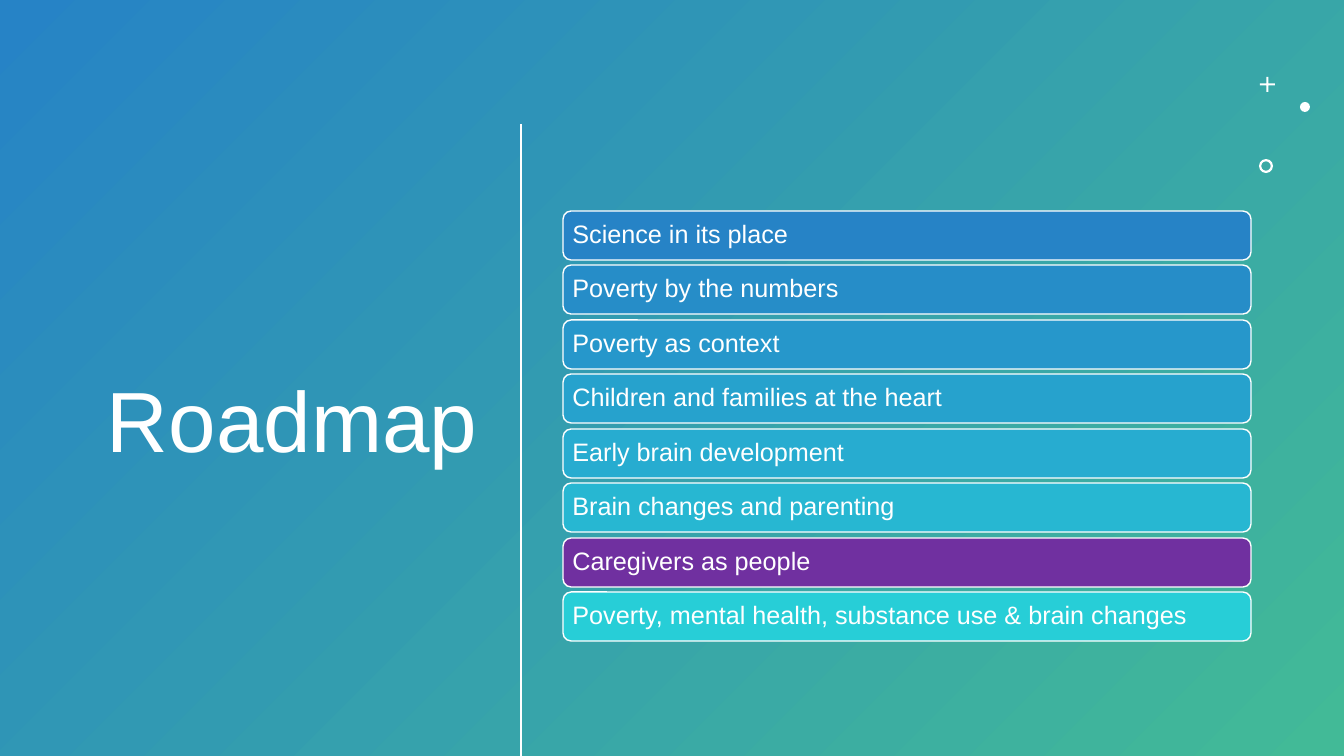
from pptx import Presentation
from pptx.dml.color import RGBColor
from pptx.enum.shapes import MSO_CONNECTOR, MSO_SHAPE
from pptx.enum.text import MSO_ANCHOR, MSO_AUTO_SIZE, PP_ALIGN
from pptx.oxml.ns import qn
from pptx.util import Inches, Pt
from lxml import etree

RECT, ROUND = MSO_SHAPE.RECTANGLE, MSO_SHAPE.ROUNDED_RECTANGLE
CROSS, OVAL, DONUT = MSO_SHAPE.CROSS, MSO_SHAPE.OVAL, MSO_SHAPE.DONUT
STRAIGHT = MSO_CONNECTOR.STRAIGHT
MIDDLE, NO_FIT = MSO_ANCHOR.MIDDLE, MSO_AUTO_SIZE.NONE
LEFT, RIGHT = PP_ALIGN.LEFT, PP_ALIGN.RIGHT

WHITE = RGBColor(0xFF, 0xFF, 0xFF)
BLUE = RGBColor(0x26, 0x83, 0xC6)
GREEN = RGBColor(0x42, 0xBA, 0x97)
PURPLE = RGBColor(0x70, 0x30, 0xA0)

STEPS = [
    ("Science in its place", BLUE),
    ("Poverty by the numbers", RGBColor(0x26, 0x8D, 0xC8)),
    ("Poverty as context", RGBColor(0x26, 0x97, 0xCB)),
    ("Children and families at the heart", RGBColor(0x26, 0xA2, 0xCD)),
    ("Early brain development", RGBColor(0x27, 0xAC, 0xD0)),
    ("Brain changes and parenting", RGBColor(0x27, 0xB7, 0xD2)),
    ("Caregivers as people", PURPLE),
    ("Poverty, mental health, substance use & brain changes",
     RGBColor(0x27, 0xCE, 0xD7)),
]
MARKS = [
    (CROSS, (1260, 77, 15, 15), 0.43),
    (OVAL, (1300, 102, 10, 10), None),
    (DONUT, (1259, 159, 14, 14), 0.16),
]


def px(n):
    return round(n * Inches(1) / 100.8)


def apply(item, values):
    for name, value in values.items():
        setattr(item, name, value)


class Deck:
    font = "Arial"
    color = WHITE

    def __init__(self):
        self.file = Presentation()
        apply(self.file, {"slide_width": px(1344), "slide_height": px(756)})
        self.slide = self.file.slides.add_slide(self.file.slide_layouts[5])
        self.shapes = self.slide.shapes

    def label(self, shape, text, size, align, inset):
        frame = shape.text_frame
        frame.text = text
        apply(frame, {"word_wrap": True, "auto_size": NO_FIT,
                      "vertical_anchor": MIDDLE})
        sides = ("left", "right", "top", "bottom")
        apply(frame, {f"margin_{side}": px(inset) for side in sides})
        line = frame.paragraphs[0]
        apply(line, {"alignment": align, "line_spacing": 0.9})
        apply(line.font, {"name": self.font, "size": Pt(size)})
        line.font.color.rgb = self.color

    def title(self, text, box):
        shape = self.shapes.title
        apply(shape, dict(zip(("left", "top", "width", "height"), map(px, box))))
        self.label(shape, text, 61, RIGHT, 9)

    def shape(self, kind, box, fill=None, adjust=None):
        shape = self.shapes.add_shape(kind, *map(px, box))
        shape.shadow.inherit = False
        shape.line.fill.background()
        if fill is not None:
            shape.fill.solid()
            shape.fill.fore_color.rgb = fill
        if adjust is not None:
            shape.adjustments[0] = adjust
        return shape

    def back(self, start, end):
        shape = self.shape(RECT, (0, 0, 1344, 756))
        shape.fill.gradient()
        shape.fill.gradient_angle = 315
        for stop, color in zip(shape.fill.gradient_stops, (start, end)):
            stop.color.rgb = color
        self.shapes.element.insert(2, shape.element)

    def bar(self, text, box, fill):
        shape = self.shape(ROUND, box, fill)
        shape.line.color.rgb = self.color
        shape.line.width = Pt(1)
        self.label(shape, text, 18, LEFT, 7)

    def rule(self, x, top, end):
        line = self.shapes.add_connector(STRAIGHT, *map(px, (x, top, x, end)))
        line.line.color.rgb = self.color
        line.line.width = Pt(2)
        etree.SubElement(line.element.spPr, qn("a:effectLst"))


def main():
    deck = Deck()
    deck.back(BLUE, GREEN)
    deck.title("Roadmap", (52, 117, 434, 616))
    for kind, box, adjust in MARKS:
        deck.shape(kind, box, WHITE, adjust)
    deck.rule(521, 124, 756)
    for i, (text, fill) in enumerate(STEPS):
        deck.bar(text, (563, 211 + 109 * i // 2, 688, 49), fill)
    deck.file.save("out.pptx")


if __name__ == "__main__":
    main()
